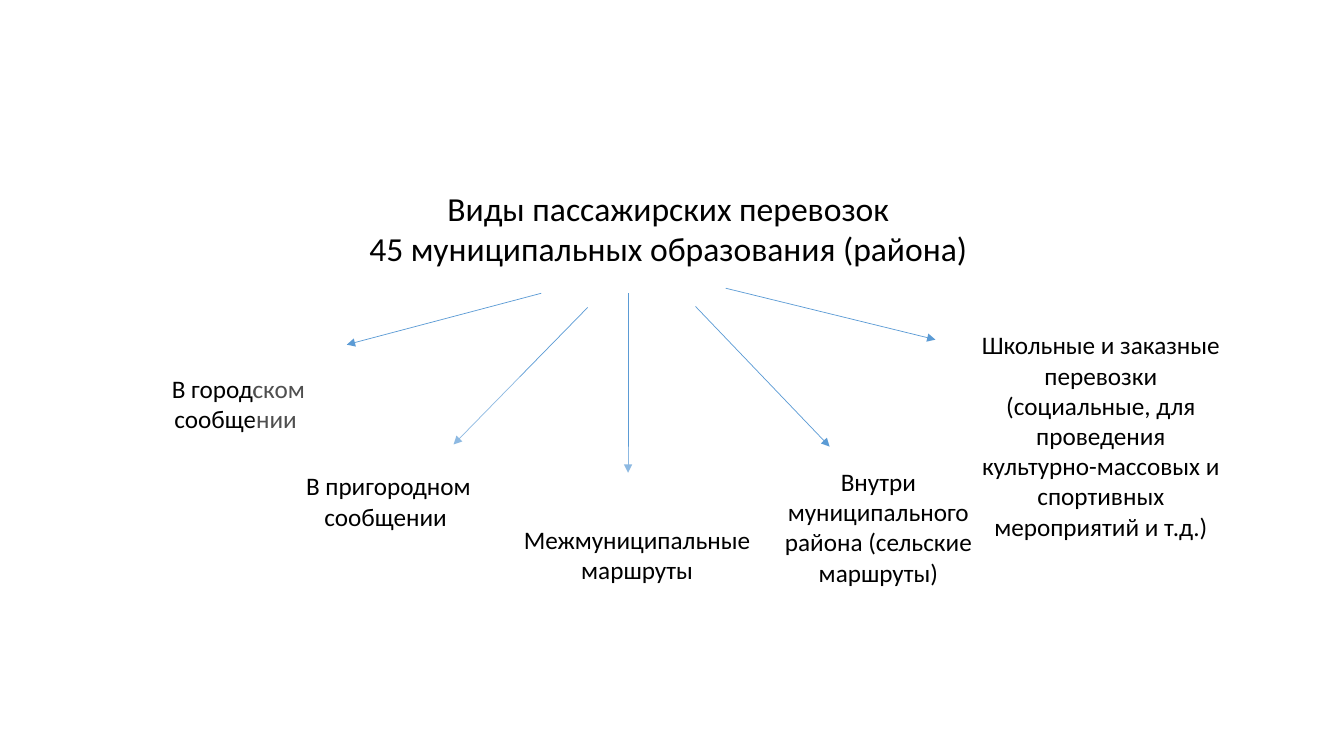
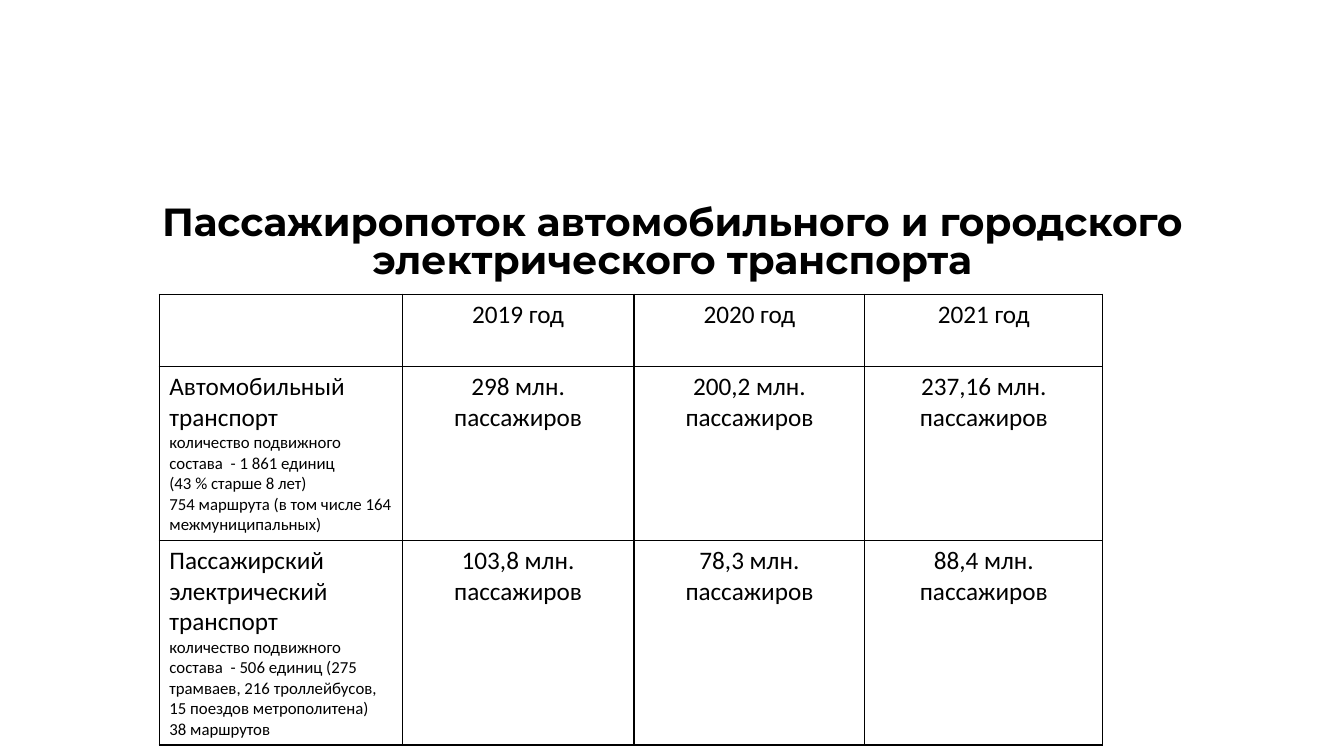
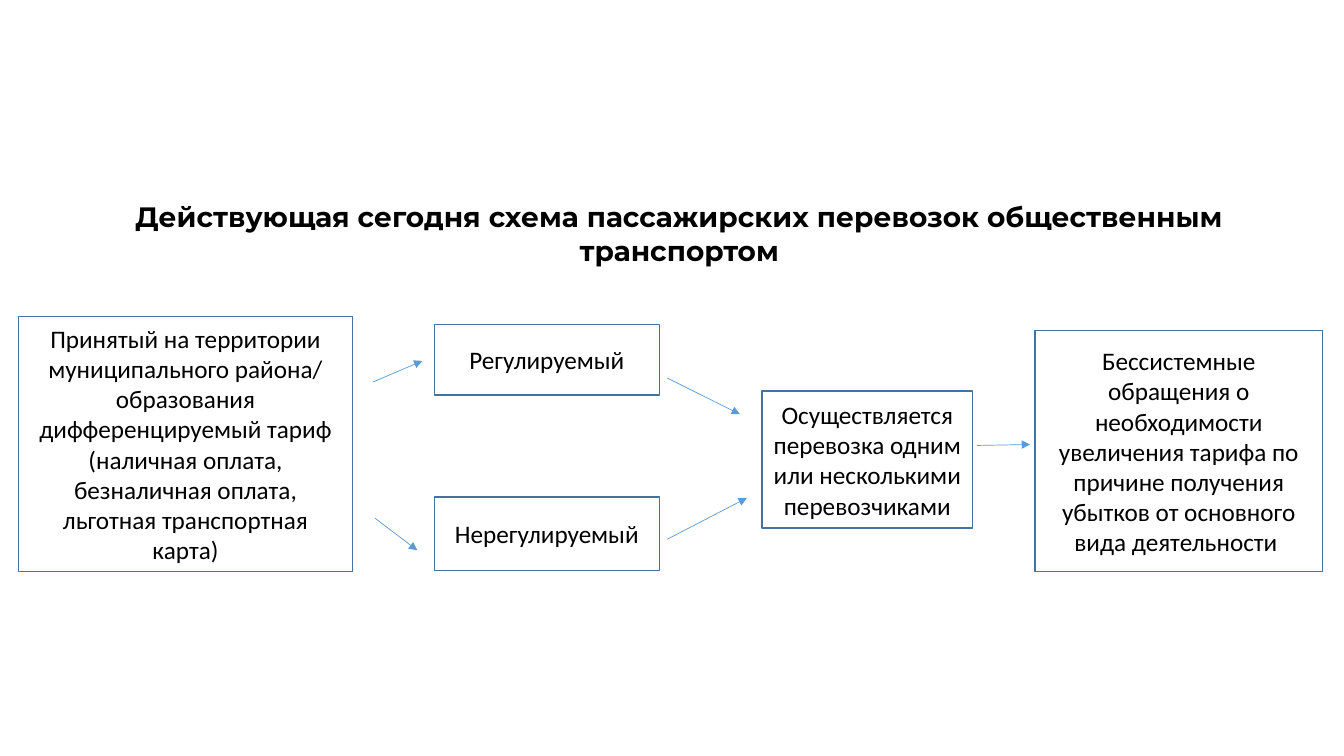
"""Build three slides on passenger transport: types, traffic and current scheme."""
from dataclasses import dataclass
from typing import Any, Optional

import lxml.etree
import pptx
import pptx.dml.color
import pptx.enum.shapes
import pptx.enum.text
import pptx.oxml.ns
import pptx.util

Pt = pptx.util.Pt
Align = pptx.enum.text.PP_ALIGN
Anchor = pptx.enum.text.MSO_ANCHOR
qn = pptx.oxml.ns.qn

BLACK = "000000"
WHITE = "FFFFFF"
ARROW_BLUE = "5B9BD5"
BORDER_BLUE = "43739E"
BODY_FONT = "Calibri"
HEADING_FONT = "Montserrat"
BODY_SIZE = 18
DETAIL_SIZE = 12


@dataclass(frozen=True)
class Box:
    """A rectangle in points with its text."""

    left: float
    top: float
    width: float
    height: float
    text: str


@dataclass(frozen=True)
class Arrow:
    """An arrow in points from its start to its head."""

    start_x: float
    start_y: float
    end_x: float
    end_y: float


TRANSPORT_TITLE = Box(17.3, 130.3, 920.2, 65.5,
                      "Виды пассажирских перевозок\n45 муниципальных образования (района)")
TRANSPORT_ARROWS = [
    Arrow(386.6, 209.5, 247.7, 246.2),
    Arrow(419.8, 219.6, 324, 317.5),
    Arrow(448.6, 209.5, 448.6, 337.7),
    Arrow(496.8, 218.9, 592.6, 319),
    Arrow(518.4, 205.9, 668.2, 242.6),
]
TRANSPORT_TYPES = [
    Box(71.3, 255.6, 198, 65.5, "В городском сообщении "),
    Box(181.4, 269.3, 192.2, 177.1, "В пригородном сообщении "),
    Box(349.2, 319, 211.7, 154.1, "Межмуниципальные маршруты"),
    Box(552.2, 326.2, 150.5, 100.1, "Внутри муниципального района (сельские маршруты)"),
    Box(693.4, 208.1, 185.8, 205.9,
        "Школьные и заказные перевозки (социальные, для проведения "
        "культурно-массовых и спортивных мероприятий и т.д.)"),
]

TRAFFIC_TITLE = Box(66.2, 144, 828, 66.2,
                    "Пассажиропоток автомобильного и городского электрического транспорта")
TRAFFIC_COLUMNS = [173.5, 165.6, 164.9, 169.9]
TRAFFIC_ROW_HEIGHTS = [51.4, 124, 146]
TRAFFIC_ROWS = [
    ["", "2019 год", "2020 год", "2021 год"],
    ["Автомобильный транспорт\nколичество подвижного состава  - 1 861 единиц\n"
     "(43 % старше 8 лет)\n754 маршрута (в том числе 164 межмуниципальных)",
     "298 млн. пассажиров", "200,2 млн. пассажиров", "237,16 млн. пассажиров"],
    ["Пассажирский электрический транспорт\nколичество подвижного состава  - 506 единиц "
     "(275 трамваев, 216 троллейбусов, 15 поездов метрополитена)\n38 маршрутов",
     "103,8 млн. пассажиров", "78,3 млн. пассажиров", "88,4 млн. пассажиров"],
]

SCHEME_TITLE = Box(19.4, 139, 931.7, 55.4,
                   "Действующая сегодня схема пассажирских перевозок общественным транспортом")
SCHEME_BOXES = [
    Box(13, 226.1, 239, 182.2,
        "Принятый на территории муниципального района/ образования дифференцируемый тариф "
        "(наличная оплата, безналичная оплата, льготная транспортная карта)"),
    Box(310.3, 231.8, 160.6, 50.4, "Регулируемый"),
    Box(310.3, 355, 160.6, 52.6, "Нерегулируемый"),
    Box(544.3, 279.4, 150.5, 97.9,
        "Осуществляется перевозка одним или несколькими перевозчиками"),
    Box(739.4, 236.2, 205.2, 172.1,
        "Бессистемные обращения о необходимости увеличения тарифа по причине "
        "получения убытков от основного вида деятельности "),
]
SCHEME_ARROWS = [
    Arrow(266.4, 272.9, 301.7, 257.8),
    Arrow(267.8, 370.1, 298.1, 393.1),
    Arrow(476.6, 270, 528.5, 295.9),
    Arrow(476.6, 385.2, 533.5, 355.7),
    Arrow(697.7, 318.2, 735.8, 317.5),
]


def color(value: str) -> pptx.dml.color.RGBColor:
    """Turn a hex string into a colour."""
    return pptx.dml.color.RGBColor.from_string(value)


def write_text(text_frame: Any, text: str, *, size: float = BODY_SIZE,
               detail_size: Optional[float] = None, font: str = BODY_FONT,
               bold: bool = False, align: Any = Align.CENTER,
               line_spacing: float = 1.0) -> None:
    """Write one paragraph per line, with lines after the first in the detail size."""
    text_frame.word_wrap = True
    for index, line in enumerate(text.split("\n")):
        paragraph = text_frame.add_paragraph() if index else text_frame.paragraphs[0]
        paragraph.alignment = align
        paragraph.line_spacing = line_spacing
        paragraph.space_before = Pt(0)
        if not line:
            continue
        run = paragraph.add_run()
        run.text = line
        run.font.name = font
        run.font.size = Pt(detail_size if index and detail_size else size)
        run.font.bold = bold
        run.font.color.rgb = color(BLACK)


def add_titled_slide(presentation: Any, title: Box, **text_format: Any) -> Any:
    """Add a title-only slide with its title placed and formatted."""
    slide = presentation.slides.add_slide(presentation.slide_layouts[5])
    shape = slide.shapes.title
    shape.left, shape.top = Pt(title.left), Pt(title.top)
    shape.width, shape.height = Pt(title.width), Pt(title.height)
    shape.text_frame.auto_size = pptx.enum.text.MSO_AUTO_SIZE.NONE
    shape.text_frame.vertical_anchor = Anchor.TOP
    write_text(shape.text_frame, title.text, **text_format)
    return slide


def add_box(slide: Any, box: Box, *, border: Optional[str] = None,
            opacity: Optional[int] = None) -> None:
    """Add a white rectangle with centred text."""
    shape = slide.shapes.add_shape(pptx.enum.shapes.MSO_SHAPE.RECTANGLE, Pt(box.left),
                                   Pt(box.top), Pt(box.width), Pt(box.height))
    shape.shadow.inherit = False
    shape.fill.solid()
    shape.fill.fore_color.rgb = color(WHITE)
    if opacity is not None:
        fill_color = shape.element.spPr.find(qn("a:solidFill")).find(qn("a:srgbClr"))
        lxml.etree.SubElement(fill_color, qn("a:alpha"), val=str(opacity * 1000))
    if border:
        shape.line.color.rgb = color(border)
        shape.line.width = Pt(1)
    else:
        shape.line.fill.background()
    shape.text_frame.vertical_anchor = Anchor.MIDDLE
    write_text(shape.text_frame, box.text)


def add_arrow(slide: Any, arrow: Arrow) -> None:
    """Add a thin blue arrow."""
    connector = slide.shapes.add_connector(
        pptx.enum.shapes.MSO_CONNECTOR.STRAIGHT, Pt(arrow.start_x), Pt(arrow.start_y),
        Pt(arrow.end_x), Pt(arrow.end_y))
    connector.line.color.rgb = color(ARROW_BLUE)
    connector.line.width = Pt(0.5)
    properties = connector.element.spPr
    lxml.etree.SubElement(properties.find(qn("a:ln")), qn("a:tailEnd"), type="triangle")
    lxml.etree.SubElement(properties, qn("a:effectLst"))


def format_cell(cell: Any) -> None:
    """Give a table cell black borders and a white fill."""
    properties = cell._tc.get_or_add_tcPr()
    for side in ("a:lnL", "a:lnR", "a:lnT", "a:lnB"):
        line = lxml.etree.SubElement(properties, qn(side), w=str(Pt(1)))
        fill = lxml.etree.SubElement(line, qn("a:solidFill"))
        lxml.etree.SubElement(fill, qn("a:srgbClr"), val=BLACK)
    cell.fill.solid()
    cell.fill.fore_color.rgb = color(WHITE)


def add_traffic_table(slide: Any) -> None:
    """Add the table of passengers by year and transport."""
    table = slide.shapes.add_table(
        len(TRAFFIC_ROWS), len(TRAFFIC_COLUMNS), Pt(113.8), Pt(210.2),
        Pt(sum(TRAFFIC_COLUMNS)), Pt(sum(TRAFFIC_ROW_HEIGHTS))).table
    for column, width in zip(table.columns, TRAFFIC_COLUMNS):
        column.width = Pt(width)
    for row, height, texts in zip(table.rows, TRAFFIC_ROW_HEIGHTS, TRAFFIC_ROWS):
        row.height = Pt(height)
        for index, (cell, text) in enumerate(zip(row.cells, texts)):
            format_cell(cell)
            write_text(cell.text_frame, text, detail_size=DETAIL_SIZE,
                       align=Align.CENTER if index else Align.LEFT)


def main() -> None:
    """Build and save the presentation."""
    presentation = pptx.Presentation()
    presentation.slide_width, presentation.slide_height = Pt(960), Pt(540)

    transport_slide = add_titled_slide(presentation, TRANSPORT_TITLE, size=24)
    for arrow in TRANSPORT_ARROWS:
        add_arrow(transport_slide, arrow)
    for box in TRANSPORT_TYPES:
        add_box(transport_slide, box, opacity=31)

    traffic_slide = add_titled_slide(presentation, TRAFFIC_TITLE, size=28,
                                     font=HEADING_FONT, bold=True, line_spacing=0.8)
    add_traffic_table(traffic_slide)

    scheme_slide = add_titled_slide(presentation, SCHEME_TITLE, size=20,
                                    font=HEADING_FONT, bold=True)
    for box in SCHEME_BOXES:
        add_box(scheme_slide, box, border=BORDER_BLUE)
    for arrow in SCHEME_ARROWS:
        add_arrow(scheme_slide, arrow)

    presentation.save("out.pptx")


if __name__ == "__main__":
    main()
